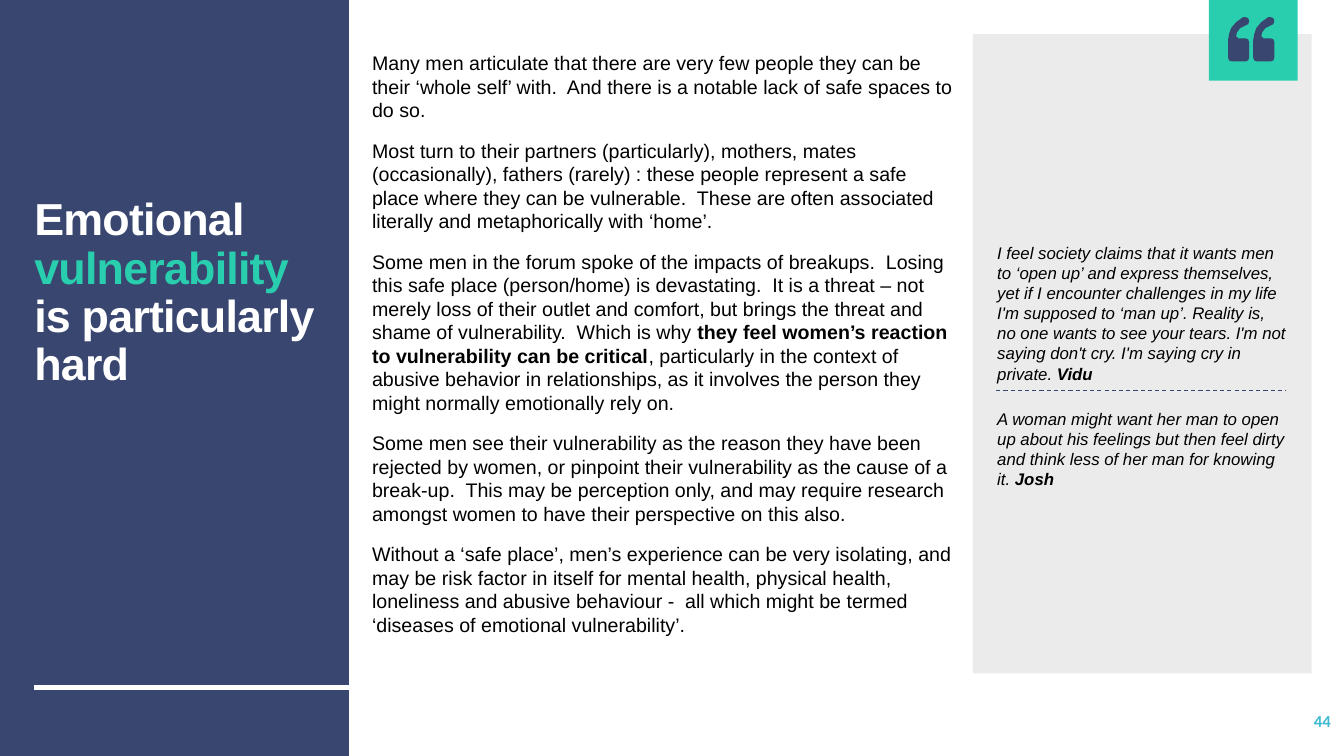
import pptx
import pptx.dml.color
import pptx.enum.dml
import pptx.enum.shapes
import pptx.enum.text
import pptx.oxml.ns
import pptx.util
from lxml import etree

Inches = pptx.util.Inches
Pt = pptx.util.Pt
RGBColor = pptx.dml.color.RGBColor
ANCHOR = pptx.enum.text.MSO_ANCHOR
ALIGN = pptx.enum.text.PP_ALIGN

NAVY = RGBColor(0x39, 0x46, 0x6F)
TEAL = RGBColor(0x28, 0xCE, 0xAE)
GREY = RGBColor(0xEB, 0xEB, 0xEB)
CYAN = RGBColor(0x40, 0xBA, 0xD2)
WHITE = RGBColor(0xFF, 0xFF, 0xFF)
BLACK = RGBColor(0, 0, 0)

TITLE = [("Emotional ", WHITE), ("vulnerability", TEAL), (" is particularly hard", WHITE)]

# Each paragraph is a list of (text, bold) runs.
FINDINGS = [
    [("Many men articulate that there are very few people they can be their ‘whole self’ with.  "
      "And there is a notable lack of safe spaces to do so.", False)],
    [("Most turn to their partners (particularly), mothers, mates (occasionally), fathers "
      "(rarely) : these people represent a safe place where they can be vulnerable.  These are "
      "often associated literally and metaphorically with ‘home’.", False)],
    [("Some men in the forum spoke of the impacts of breakups.  Losing this safe place "
      "(person/home) is devastating.  It is a threat – not merely loss of their outlet and "
      "comfort, but brings the threat and shame of vulnerability.  Which is why ", False),
     ("they feel women’s reaction to vulnerability can be critical", True),
     (", particularly in the context of abusive behavior in relationships, as it involves the "
      "person they might normally emotionally rely on.", False)],
    [("Some men see their vulnerability as the reason they have been rejected by women, or "
      "pinpoint their vulnerability as the cause of a  break-up.  This may be perception only, "
      "and may require research amongst women to have their perspective on this also.", False)],
    [("Without a ‘safe place’, men’s experience can be very isolating, and may be risk factor in "
      "itself for mental health, physical health, loneliness and abusive behaviour -  all which "
      "might be termed ‘diseases of emotional vulnerability’.", False)],
]
QUOTES = [
    [("I feel society claims that it wants men to ‘open up’ and express themselves, yet if I "
      "encounter challenges in my life I'm supposed to ‘man up’. Reality is, no one wants to see "
      "your tears. I'm not saying don't cry. I'm saying cry in private. ", False),
     ("Vidu", True)],
    [("A woman might want her man to open up about his feelings but then feel dirty and think "
      "less of her man for knowing it. ", False),
     ("Josh", True)],
]

# Outline of one quotation mark, in inches from its top left corner.
MARK = [
    (0, 0.4), (0.01, 0.43), (0.04, 0.44), (0.17, 0.44), (0.2, 0.43), (0.21, 0.4),
    (0.21, 0.25), (0.2, 0.22), (0.17, 0.21), (0.1, 0.21), (0.08, 0.19), (0.09, 0.15),
    (0.12, 0.11), (0.18, 0.08), (0.2, 0.07), (0.21, 0.04), (0.2, 0.01), (0.17, 0),
    (0.15, 0), (0.08, 0.05), (0.03, 0.11), (0.01, 0.17), (0, 0.23),
]
MARK_STEP = 0.25


def place(shape, left, top, width, height):
    shape.left, shape.top = Inches(left), Inches(top)
    shape.width, shape.height = Inches(width), Inches(height)


def paint(shape, color):
    shape.fill.solid()
    shape.fill.fore_color.rgb = color
    shape.line.fill.background()
    shape.shadow.inherit = False


def add_panel(slide, left, top, width, height, color):
    panel = slide.shapes.add_shape(
        pptx.enum.shapes.MSO_SHAPE.RECTANGLE,
        Inches(left), Inches(top), Inches(width), Inches(height))
    paint(panel, color)
    return panel


def send_to_back(shape):
    shape.element.getparent().insert(2, shape.element)


def add_rule(slide, left, right, y, color, width):
    rule = slide.shapes.add_connector(
        pptx.enum.shapes.MSO_CONNECTOR.STRAIGHT,
        Inches(left), Inches(y), Inches(right), Inches(y))
    rule.line.color.rgb = color
    rule.line.width = Pt(width)
    etree.SubElement(rule.element.spPr, pptx.oxml.ns.qn("a:effectLst"))
    return rule


def add_span(para, text, size, color, bold=False, italic=False, font="Arial"):
    span = para.add_run()
    span.text = text
    span.font.name = font
    span.font.size = Pt(size)
    span.font.color.rgb = color
    span.font.bold = bold
    span.font.italic = italic
    return span


def prepare_frame(box):
    frame = box.text_frame
    frame.word_wrap = True
    frame.auto_size = pptx.enum.text.MSO_AUTO_SIZE.NONE
    frame.vertical_anchor = ANCHOR.MIDDLE
    return frame


def fill_body(box, paragraphs, size, space_after, italic=False):
    """Write unbulleted paragraphs into a body placeholder."""
    frame = prepare_frame(box)
    for index, spans in enumerate(paragraphs):
        para = frame.add_paragraph() if index else frame.paragraphs[0]
        para.space_before = Pt(0)
        para.space_after = Pt(space_after)
        properties = para._p.get_or_add_pPr()
        properties.set("marL", "0")
        properties.set("indent", "0")
        etree.SubElement(properties, pptx.oxml.ns.qn("a:buNone"))
        for text, bold in spans:
            add_span(para, text, size, BLACK, bold, italic)
    return frame


def build_title_panel(slide, title, left, top, width, height):
    send_to_back(add_panel(slide, left, top, width, height, NAVY))
    place(title, left + 0.24, top + 0.4, 3.01, 5.03)
    para = prepare_frame(title).paragraphs[0]
    para.alignment = ALIGN.LEFT
    para.line_spacing = 0.9
    for text, color in TITLE:
        span = add_span(para, text, 32, color, bold=True)
        span.font._element.set("spc", "-60")
    add_rule(slide, left + 0.34, left + width, top + 6.82, WHITE, 3)


def build_findings(body, left, top, width, height):
    place(body, left, top, width, height)
    fill_body(body, FINDINGS, 14, 12)


def add_quotation_marks(slide, left, top):
    outline = None
    for column in range(2):
        points = [(Inches(left + column * MARK_STEP + x), Inches(top + y)) for x, y in MARK]
        if outline is None:
            outline = slide.shapes.build_freeform(*points[0])
        else:
            outline.move_to(*points[0])
        outline.add_line_segments(points[1:], close=True)
    paint(outline.convert_to_shape(), NAVY)


def build_quote_panel(slide, body, left, top, width, height):
    send_to_back(add_panel(slide, left, top, width, height, GREY))
    place(body, left + 0.14, top + 0.94, 3.07, 5.6)
    frame = fill_body(body, QUOTES, 12, 18, italic=True)
    frame.margin_bottom = Inches(0.95)
    rule = add_rule(slide, left + 0.23, left + 3.1, top + 3.53, NAVY, 0.75)
    rule.line.dash_style = pptx.enum.dml.MSO_LINE.DASH
    add_panel(slide, left + 2.34, 0, 0.88, 0.8, TEAL)
    add_quotation_marks(slide, left + 2.53, 0.17)


def add_page_number(slide, left, top, width, height):
    box = slide.shapes.add_textbox(Inches(left), Inches(top), Inches(width), Inches(height))
    para = prepare_frame(box).paragraphs[0]
    para.alignment = ALIGN.RIGHT
    add_span(para, "44", 12, CYAN, bold=True, font="Calibri")


def main():
    deck = pptx.Presentation()
    deck.slide_width, deck.slide_height = Inches(13.33), Inches(7.5)
    slide = deck.slides.add_slide(deck.slide_layouts.get_by_name("Two Content"))
    title, findings, quotes = slide.placeholders
    build_title_panel(slide, title, 0, 0, 3.46, 7.5)
    build_findings(findings, 3.59, 0.81, 5.99, 5.2)
    build_quote_panel(slide, quotes, 9.65, 0.34, 3.36, 6.34)
    add_page_number(slide, 11.63, 6.95, 1.67, 0.4)
    deck.save("out.pptx")


if __name__ == "__main__":
    main()
